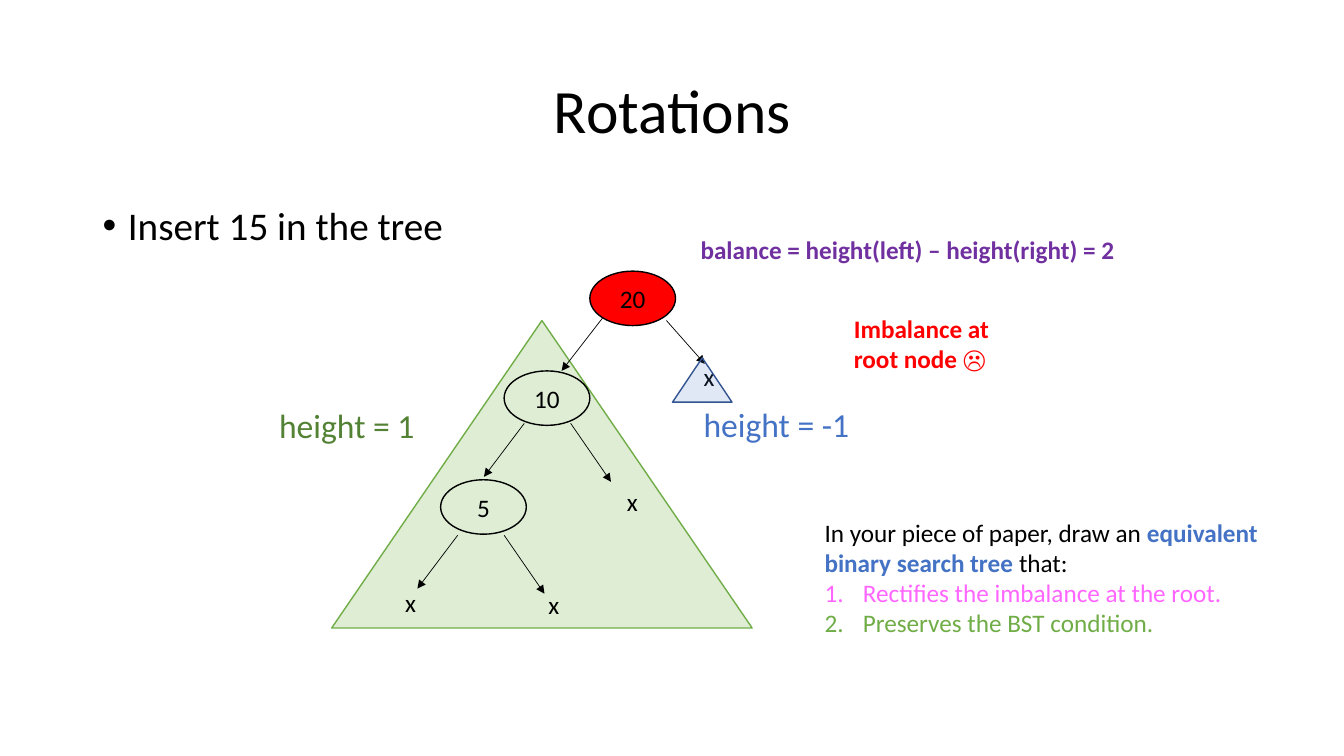
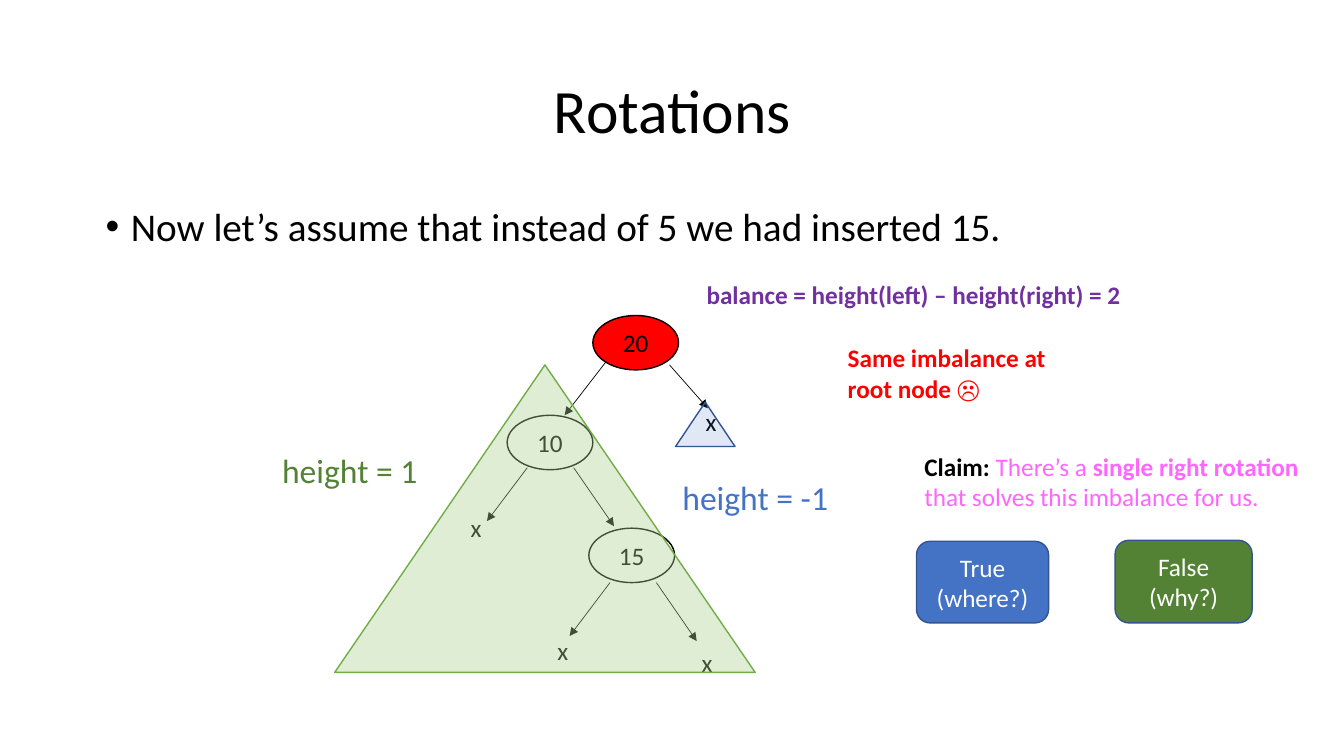
"""Build two slides on rotations in binary search trees."""
import pptx
import pptx.util
import pptx.dml.color
import pptx.enum.shapes
import pptx.enum.text
import pptx.oxml.ns
from lxml import etree

Inches, Pt = pptx.util.Inches, pptx.util.Pt
SHAPE = pptx.enum.shapes.MSO_SHAPE
LINK = pptx.enum.shapes.MSO_CONNECTOR
ALIGN = pptx.enum.text.PP_ALIGN
ANCHOR = pptx.enum.text.MSO_ANCHOR
qn = pptx.oxml.ns.qn

FONT = "Calibri"
HUES = {
    "black": "000000", "white": "FFFFFF", "red": "FF0000", "purple": "7030A0",
    "blue": "4472C4", "navy": "325491", "green": "70AD47", "leaf": "A9D18E",
    "moss": "548235", "pink": "FF66FF",
}
TITLE = "Rotations"
BALANCE = "balance = height(left) – height(right) = 2"

NODE = (0.85, 0.54)
ROOT = (5.85, 2.69)
ROOT_ARMS = [(0.13, 0.46, -0.41, 0.53), (0.76, 0.49, 0.38, 0.43)]
ARMS = [(0, 0, -0.4, 0.53), (0.46, 0, 0.4, 0.58)]

SLIDES = [
    {
        "shift": (0, 0), "veil": False,
        "body": ("Insert 15 in the tree", 0.92, 2),
        "nodes": [("10", 5, 3.68, 0.2, 0.52), ("5", 4.37, 4.76, 0.17, 0.55)],
        "ends": [(6.88, 3.54), (3.92, 5.78), (5.34, 5.8), (6.12, 4.78)],
        "notes": [
            ("Imbalance at root node ☹", (8.37, 3.06, 1.8, 0.71), "red", 18, True),
            (BALANCE, (6.85, 2.28, 5, 0.4), "purple", 18, True),
            ("height = -1", (6.88, 3.96, 1.84, 0.5), "blue", 24, False),
        ],
        "ask": ((8.08, 5.08, 4.97, 1.31), [
            ("In your piece of paper, draw an ", "black", False),
            ("equivalent binary search tree ", "blue", True),
            ("that:", "black", False)]),
        "steps": [("Rectifies the imbalance at the root.", "pink", False),
                  ("Preserves the BST condition.", "green", False)],
        "keys": [],
    },
    {
        "shift": (0.03, 0.44), "veil": True,
        "body": ("Now let’s assume that instead of 5 we had inserted 15.", 0.95, 2.01),
        "nodes": [("10", 5.03, 4.12, 0.2, 0.52), ("15", 5.84, 5.24, 0.21, 0.54)],
        "ends": [(6.9, 3.98), (5.43, 6.25), (6.86, 6.37), (4.57, 5.03)],
        "notes": [
            ("Same imbalance at root node ☹", (8.31, 3.35, 2.36, 0.71), "red", 18, True),
            (BALANCE, (6.91, 2.72, 5, 0.4), "purple", 18, True),
            ("height = -1", (6.67, 4.68, 1.84, 0.5), "blue", 24, False),
        ],
        "ask": ((9.07, 4.43, 3.93, 0.71), [
            ("Claim: ", "black", True),
            ("There’s a ", "pink", False),
            ("single right rotation ", "pink", True),
            ("that solves this imbalance for us.", "pink", False)]),
        "steps": [],
        "keys": [(["True", "(where?)"], (9.09, 5.37, 1.31, 0.81), "blue"),
                 (["False", "(why?)"], (11.06, 5.36, 1.36, 0.82), "moss")],
    },
]


def rgb(hue):
    return pptx.dml.color.RGBColor.from_string(HUES[hue])


def write(frame, paras, size=18, hue="black", bold=False, align=ALIGN.LEFT,
          anchor=ANCHOR.TOP, lead=None, gap=None, mark=None, dent=0, skip=0):
    """Fill a frame; each paragraph is a string or a list of (text, hue, bold)."""
    frame.word_wrap = True
    frame.vertical_anchor = anchor
    for i, runs in enumerate(paras):
        para = frame.add_paragraph() if i else frame.paragraphs[0]
        para.alignment = align
        if lead:
            para.line_spacing = lead
        if gap:
            para.space_before = Pt(gap)
        if mark and i >= skip:
            props = para._p.get_or_add_pPr()
            props.set("marL", str(Inches(dent)))
            props.set("indent", str(-Inches(dent)))
            etree.SubElement(props, qn("a:buFont"), typeface="Arial" if mark == "•" else FONT)
            if mark == "•":
                etree.SubElement(props, qn("a:buChar"), char=mark)
            else:
                etree.SubElement(props, qn("a:buAutoNum"), type=mark)
        for text, tint, heavy in [(runs, hue, bold)] if isinstance(runs, str) else runs:
            run = para.add_run()
            run.text = text
            run.font.name = FONT
            run.font.size = Pt(size)
            run.font.bold = heavy
            run.font.color.rgb = rgb(tint)


def label(slide, box, paras, **form):
    write(slide.shapes.add_textbox(*map(Inches, box)).text_frame, paras, **form)


def draw(slide, kind, box, fill=None, line="black", alpha=None, paras=(), hue="black"):
    shape = slide.shapes.add_shape(kind, *map(Inches, box))
    shape.shadow.inherit = False
    if fill:
        shape.fill.solid()
        shape.fill.fore_color.rgb = rgb(fill)
    else:
        shape.fill.background()
    if alpha:
        tint = shape.element.spPr.find(qn("a:solidFill")).find(qn("a:srgbClr"))
        etree.SubElement(tint, qn("a:alpha"), val=str(alpha * 1000))
    shape.line.color.rgb = rgb(line)
    shape.line.width = Pt(1)
    write(shape.text_frame, paras, hue=hue, align=ALIGN.CENTER, anchor=ANCHOR.MIDDLE)


def arrow(slide, x, y, dx, dy):
    ends = map(Inches, (x, y, x + dx, y + dy))
    link = slide.shapes.add_connector(LINK.STRAIGHT, *ends)
    link.line.color.rgb = rgb("black")
    link.line.width = Pt(0.5)
    props = link.element.spPr
    etree.SubElement(props.find(qn("a:ln")), qn("a:tailEnd"), type="triangle")
    etree.SubElement(props, qn("a:effectLst"))


def tree(slide, data):
    right, down = data["shift"]

    def cover():
        draw(slide, SHAPE.ISOSCELES_TRIANGLE, (3.29 + right, 3.18 + down, 4.17, 3.05),
             fill="leaf", line="green", alpha=38)

    if not data["veil"]:
        cover()
    x, y = ROOT[0] + right, ROOT[1] + down
    for ax, ay, dx, dy in ROOT_ARMS:
        arrow(slide, x + ax, y + ay, dx, dy)
    for name, left, top, sx, sy in data["nodes"]:
        draw(slide, SHAPE.OVAL, (left, top, *NODE), paras=[name])
        for ax, ay, dx, dy in ARMS:
            arrow(slide, left + sx + ax, top + sy + ay, dx, dy)
    for left, top in data["ends"]:
        label(slide, (left, top, 0.31, 0.4), ["x"])
    if data["veil"]:
        cover()
    draw(slide, SHAPE.OVAL, (x, y, *NODE), fill="red", paras=["20"])
    draw(slide, SHAPE.ISOSCELES_TRIANGLE, (6.67 + right, 3.55 + down, 0.59, 0.44),
         fill="blue", line="navy", alpha=16)
    label(slide, (2.67 + right, 3.97 + down, 1.84, 0.5), ["height = 1"], size=24, hue="moss")


def build(deck, data):
    slide = deck.slides.add_slide(deck.slide_layouts[6])
    label(slide, (0.92, 0.4, 11.5, 1.45), [TITLE], size=44, lead=0.9,
          align=ALIGN.CENTER, anchor=ANCHOR.MIDDLE)
    text, left, top = data["body"]
    label(slide, (left, top, 11.5, 4.76), [text], size=28, lead=0.9, gap=10,
          mark="•", dent=0.25)
    tree(slide, data)
    for text, box, hue, size, bold in data["notes"]:
        label(slide, box, [text], hue=hue, size=size, bold=bold)
    box, runs = data["ask"]
    label(slide, box, [runs] + [[step] for step in data["steps"]],
          mark="arabicPeriod", dent=0.38, skip=1)
    for paras, box, fill in data["keys"]:
        draw(slide, SHAPE.ROUNDED_RECTANGLE, box, fill=fill, line="navy",
             paras=paras, hue="white")


def main():
    deck = pptx.Presentation()
    deck.slide_width, deck.slide_height = Inches(13.33), Inches(7.5)
    for data in SLIDES:
        build(deck, data)
    deck.save("out.pptx")


if __name__ == "__main__":
    main()
